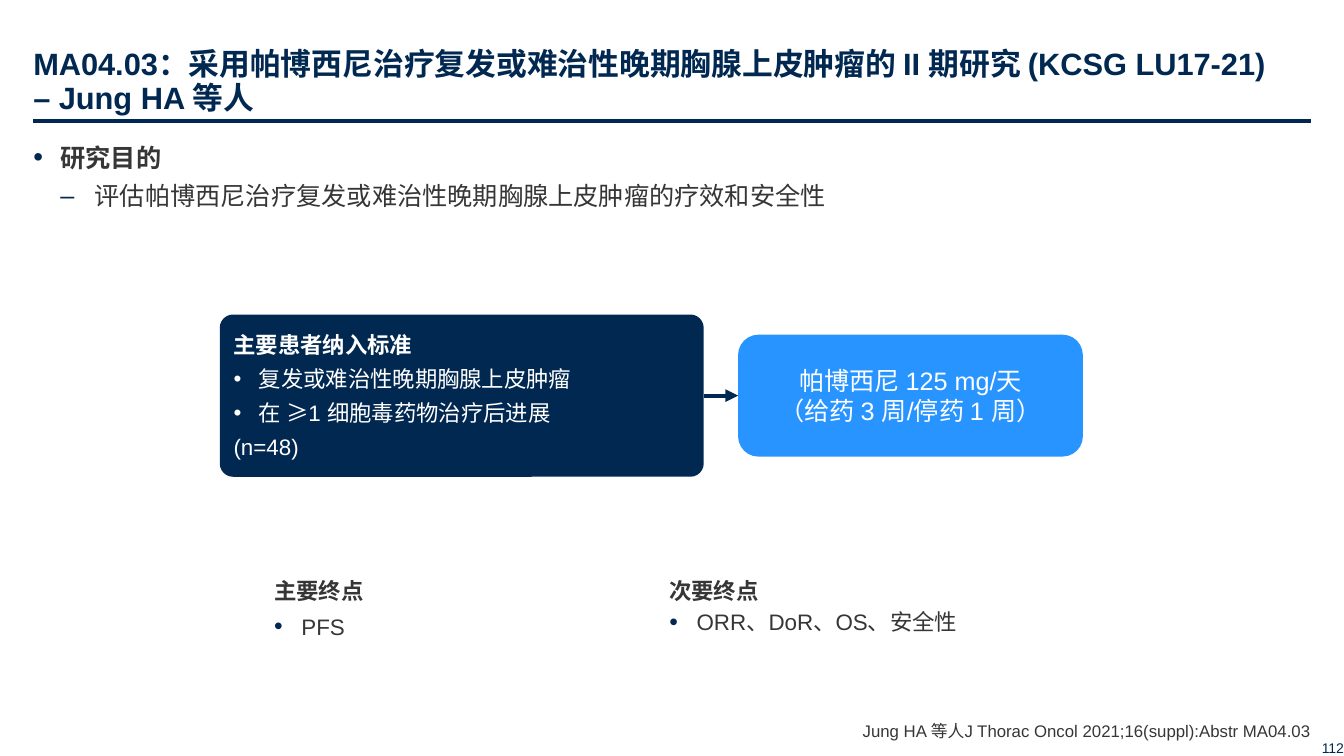
from pptx import Presentation
from pptx.dml.color import RGBColor
from pptx.enum.shapes import MSO_CONNECTOR as Link, MSO_SHAPE as Shape
from pptx.enum.text import MSO_ANCHOR as Anchor, MSO_AUTO_SIZE as Fit, PP_ALIGN as Align
from pptx.oxml.ns import qn
from pptx.util import Pt
from lxml.etree import SubElement as Sub

PX = 9144
NAVY = RGBColor(0x00, 0x28, 0x50)
BLUE = RGBColor(0x28, 0x94, 0xFF)
GREY = RGBColor(0x36, 0x36, 0x36)
WHITE = RGBColor(0xFF, 0xFF, 0xFF)


def place(item, left, top, width, height):
    item.left, item.top = left * PX, top * PX
    item.width, item.height = width * PX, height * PX


def set_frame(frame, inset, anchor=Anchor.TOP):
    frame.word_wrap = True
    frame.auto_size = Fit.NONE
    frame.vertical_anchor = anchor
    (frame.margin_left, frame.margin_top,
     frame.margin_right, frame.margin_bottom) = [n * PX for n in inset]


def write(frame, text, size, color, bold=False, align=Align.LEFT,
          before=0, after=0, level=0):
    para = frame.paragraphs[0]
    if para.runs:
        para = frame.add_paragraph()
    para.alignment, para.level = align, level
    para.space_before, para.space_after = Pt(before), Pt(after)
    for row, line in enumerate(text.split("\n")):
        if row:
            para.add_line_break()
        run = para.add_run()
        run.text = line
        font = run.font
        font.name, font.size, font.bold = "Arial", Pt(size), bold
        font.color.rgb = color
    return para


def add_mark(para, left, hang, color, char="•", scale=100):
    props = para._p.get_or_add_pPr()
    props.set("marL", str(left * PX))
    props.set("indent", str(-hang * PX))
    Sub(Sub(props, qn("a:buClr")), qn("a:srgbClr"), val=str(color))
    Sub(props, qn("a:buSzPct"), val=str(scale * 1000))
    Sub(props, qn("a:buFont"), typeface="Arial")
    Sub(props, qn("a:buChar"), char=char)


def add_text(slide, area, inset, anchor=Anchor.TOP):
    box = slide.shapes.add_textbox(*[n * PX for n in area])
    set_frame(box.text_frame, inset, anchor)
    return box.text_frame


def add_box(slide, area, round_by, fill, inset):
    box = slide.shapes.add_shape(Shape.ROUNDED_RECTANGLE, *[n * PX for n in area])
    box.adjustments[0] = round_by
    box.shadow.inherit = False
    box.fill.solid()
    box.fill.fore_color.rgb = fill
    box.line.fill.background()
    set_frame(box.text_frame, inset, Anchor.MIDDLE)
    return box


def add_line(slide, ends, width):
    line = slide.shapes.add_connector(Link.STRAIGHT, *[n * PX for n in ends])
    line.line.color.rgb = NAVY
    line.line.width = Pt(width)
    Sub(line._element.spPr, qn("a:effectLst"))
    return line


def add_goal(slide, left, inset, head, item, before, after):
    frame = add_text(slide, (left, 568, 467, 85), inset)
    write(frame, head, 16, GREY, True, after=after)
    para = write(frame, item, 16, GREY, before=before, after=after)
    add_mark(para, 27, 27, NAVY, scale=110)


def fill_title(title):
    place(title, 33, 12, 1286, 103)
    set_frame(title.text_frame, (0, 5, 0, 0), Anchor.BOTTOM)
    text = ("MA04.03：采用帕博西尼治疗复发或难治性晚期胸腺上皮肿瘤的 II 期研究 "
            "(KCSG LU17-21) \n– Jung HA 等人")
    write(title.text_frame, text, 22, NAVY, True).line_spacing = 0.9


def fill_body(body):
    place(body, 33, 136, 1267, 553)
    frame = body.text_frame
    set_frame(frame, (0, 5, 0, 5))
    add_mark(write(frame, "研究目的", 18, GREY, True, after=6), 27, 27, NAVY, scale=110)
    aim = write(frame, "评估帕博西尼治疗复发或难治性晚期胸腺上皮肿瘤的疗效和安全性",
                18, GREY, after=6, level=1)
    add_mark(aim, 61, 34, NAVY, "–")


def add_flow(slide):
    dose = add_box(slide, (732, 332, 342, 121), 0.167, BLUE, (10, 0, 10, 0))
    write(dose.text_frame, "帕博西尼 125 mg/天\n（给药 3 周/停药 1 周）",
          18, WHITE, align=Align.CENTER)
    entry = add_box(slide, (218, 312, 480, 161), 0.082, NAVY, (10, 5, 10, 5))
    frame = entry.text_frame
    write(frame, "主要患者纳入标准", 16, WHITE, True, after=5)
    for item in ("复发或难治性晚期胸腺上皮肿瘤", "在 ≥1 细胞毒药物治疗后进展"):
        add_mark(write(frame, item, 16, WHITE, after=5), 25, 25, WHITE)
    write(frame, "(n=48)", 16, WHITE, after=5)
    arrow = add_line(slide, (698, 393, 732, 393), 3)
    arrow.begin_connect(entry, 3)
    arrow.end_connect(dose, 1)
    Sub(arrow.line._get_or_add_ln(), qn("a:tailEnd"), type="triangle")


def main():
    deck = Presentation()
    deck.slide_width, deck.slide_height = 1333 * PX, 750 * PX
    slide = deck.slides.add_slide(deck.slide_layouts[1])
    fill_title(slide.shapes.title)
    fill_body(slide.placeholders[1])
    add_line(slide, (33, 120, 1300, 120), 2.25)
    add_flow(slide)
    add_goal(slide, 272, (0, 5, 0, 5), "主要终点", "PFS", 0, 6)
    add_goal(slide, 654, (10, 5, 10, 5), "次要终点", "ORR、DoR、OS、安全性", 3, 0)
    cite = add_text(slide, (698, 713, 602, 22), (0, 0, 0, 0), Anchor.BOTTOM)
    write(cite, "Jung HA 等人J Thorac Oncol 2021;16(suppl):Abstr MA04.03",
          12, GREY, align=Align.RIGHT)
    page = add_text(slide, (1268, 710, 65, 40), (10, 5, 0, 0), Anchor.BOTTOM)
    write(page, "112", 10, NAVY, align=Align.RIGHT)
    deck.save("out.pptx")


if __name__ == "__main__":
    main()
